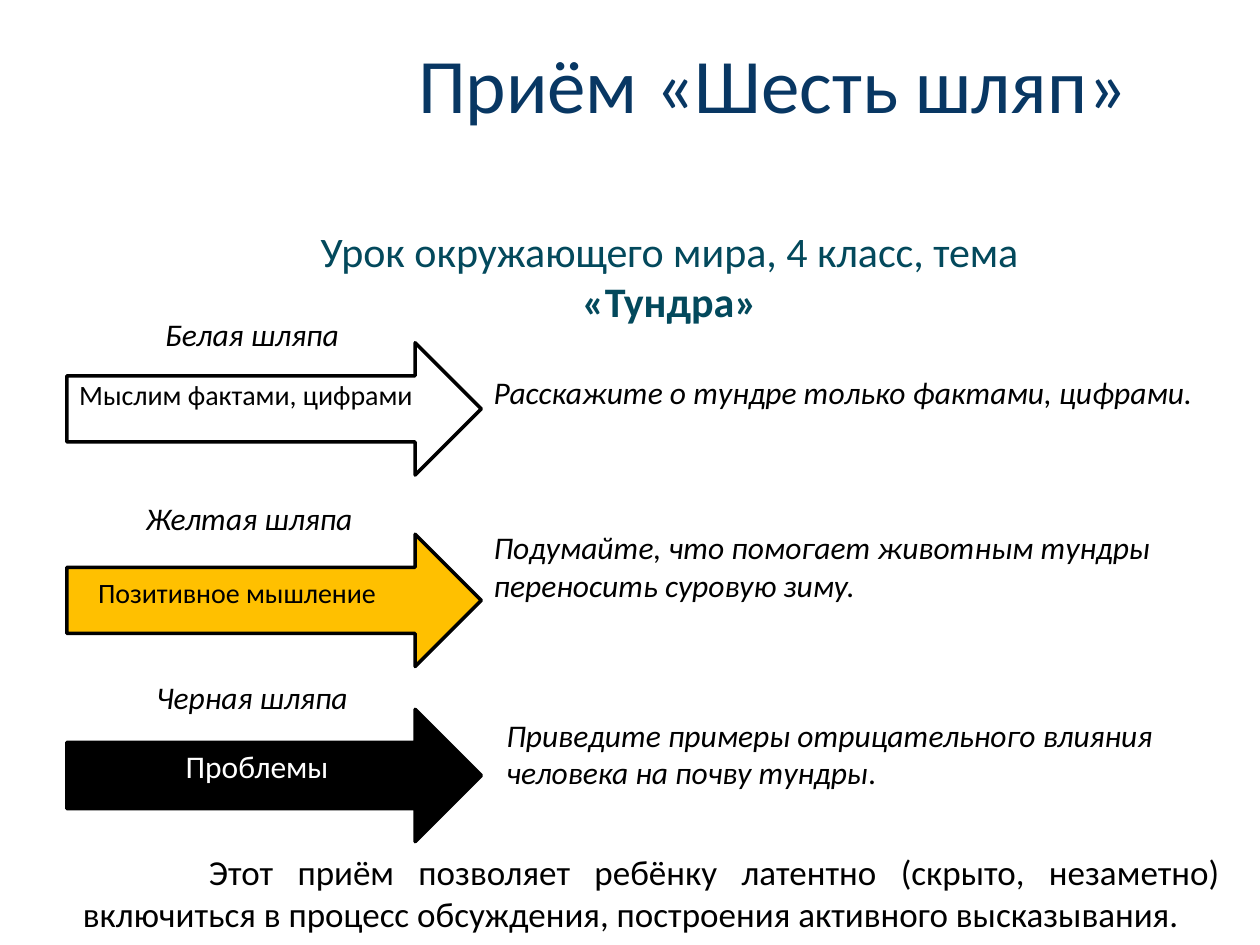
"""Build the "Six hats" lesson slide."""
from dataclasses import dataclass

from pptx import Presentation
from pptx.dml.color import RGBColor
from pptx.enum.shapes import MSO_SHAPE
from pptx.enum.text import MSO_ANCHOR, MSO_AUTO_SIZE, PP_ALIGN
from pptx.util import Pt

PX = 9144


@dataclass(frozen=True)
class Theme:
    font: str = "Calibri"
    navy: str = "083763"
    teal: str = "03495C"
    black: str = "000000"
    white: str = "FFFFFF"
    yellow: str = "FFC000"
    title: int = 44
    subtitle: int = 24
    summary: int = 20
    body: int = 18
    small: int = 16


theme = Theme()


def style_text(shape, text, size, color, align=PP_ALIGN.LEFT, italic=False):
    frame = shape.text_frame
    frame.word_wrap = True
    frame.auto_size = MSO_AUTO_SIZE.NONE
    frame.vertical_anchor = MSO_ANCHOR.TOP
    paragraph = frame.paragraphs[0]
    paragraph.text = text
    paragraph.alignment = align
    paragraph.font.name = theme.font
    paragraph.font.size = Pt(size)
    paragraph.font.italic = italic
    paragraph.font.color.rgb = RGBColor.from_string(color)
    return paragraph


def add_text(box, *style, **options):
    shape = slide.shapes.add_textbox(*(length * PX for length in box))
    return style_text(shape, *style, **options)


presentation = Presentation()
presentation.slide_width = 1000 * PX
presentation.slide_height = 750 * PX
slide = presentation.slides.add_slide(presentation.slide_layouts[5])

title = slide.shapes.title
title.left, title.top, title.width, title.height = (
    length * PX for length in (319, 24, 589, 84))
style_text(title, "Приём «Шесть шляп»", theme.title, theme.navy, PP_ALIGN.CENTER)
title.text_frame.word_wrap = False

subtitle = add_text((185, 174, 693, 91), "Урок окружающего мира, 4 класс, тема ",
                    theme.subtitle, theme.teal, PP_ALIGN.CENTER)
topic = subtitle.add_run()
topic.text = "«Тундра»"
topic.font.bold = True

hats = [
    (272, theme.white,
     "Белая шляпа", (61, 245, 278, 40), PP_ALIGN.CENTER,
     "Мыслим фактами, цифрами", (53, 295, 312, 37), PP_ALIGN.LEFT,
     theme.small, theme.black,
     "Расскажите о тундре только фактами, цифрами.", (382, 291, 587, 71)),
    (424, theme.yellow,
     "Желтая шляпа", (106, 391, 212, 40), PP_ALIGN.LEFT,
     "Позитивное мышление", (68, 452, 278, 37), PP_ALIGN.LEFT,
     theme.small, theme.black,
     "Подумайте, что помогает животным тундры переносить суровую зиму.",
     (382, 414, 597, 101)),
    (563, theme.black,
     "Черная шляпа", (82, 533, 236, 40), PP_ALIGN.CENTER,
     "Проблемы", (103, 588, 202, 40), PP_ALIGN.CENTER,
     theme.body, theme.white,
     "Приведите примеры отрицательного влияния человека на почву тундры",
     (392, 563, 587, 101)),
]

for (top, fill, hat, hat_box, hat_align, thinking, thinking_box, thinking_align,
     thinking_size, thinking_color, task, task_box) in hats:
    arrow = slide.shapes.add_shape(
        MSO_SHAPE.RIGHT_ARROW, 53 * PX, top * PX, 329 * PX, 105 * PX)
    arrow.shadow.inherit = False
    arrow.fill.solid()
    arrow.fill.fore_color.rgb = RGBColor.from_string(fill)
    arrow.line.color.rgb = RGBColor.from_string(theme.black)
    arrow.line.width = Pt(2)
    add_text(hat_box, hat, theme.body, theme.black, hat_align, italic=True)
    add_text(thinking_box, thinking, thinking_size, thinking_color, thinking_align)
    task_paragraph = add_text(task_box, task, theme.body, theme.black, italic=True)

full_stop = task_paragraph.add_run()
full_stop.text = "."
full_stop.font.italic = False

summary = add_text(
    (56, 670, 922, 80),
    "Этот приём позволяет ребёнку латентно (скрыто, незаметно) включиться "
    "в процесс обсуждения, построения активного высказывания.",
    theme.summary, theme.black, PP_ALIGN.JUSTIFY)
summary_properties = summary._p.get_or_add_pPr()
summary_properties.set("marL", "0")
summary_properties.set("indent", str(100 * PX))

presentation.save("out.pptx")
